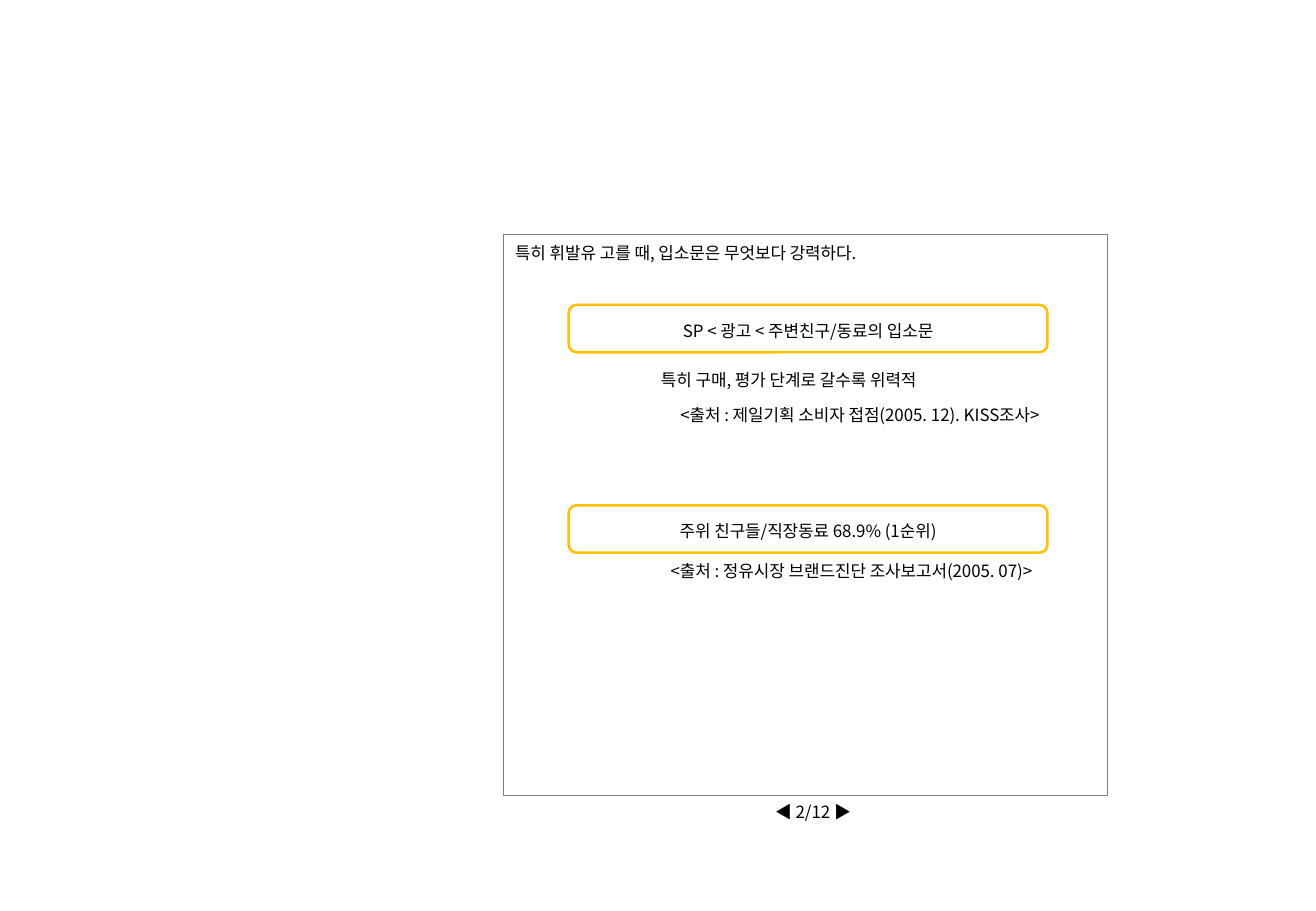
from pptx import Presentation
from pptx.dml.color import RGBColor
from pptx.enum.shapes import MSO_SHAPE
from pptx.enum.text import MSO_ANCHOR, MSO_AUTO_SIZE, PP_ALIGN
from pptx.oxml.ns import qn
from pptx.util import Inches, Pt
from lxml import etree

FONT = "Noto Sans CJK KR"


def color(value):
    return RGBColor.from_string(value)


def write(frame, text, align=PP_ALIGN.LEFT, wrap=False, line_spacing=None):
    frame.word_wrap = wrap
    para = frame.paragraphs[0]
    para.alignment = align
    if line_spacing:
        para.line_spacing = line_spacing
    span = para.add_run()
    span.text = text
    span.font.size = Pt(10)
    span.font.name = FONT
    span.font.color.rgb = color("000000")
    # Hangul takes the East Asian typeface
    etree.SubElement(span.font._element, qn("a:ea"), typeface=FONT)


def add_label(page, left, top, width, text, **text_format):
    box = page.shapes.add_textbox(
        Inches(left), Inches(top), Inches(width), Inches(0.27))
    write(box.text_frame, text, **text_format)
    box.text_frame.auto_size = MSO_AUTO_SIZE.SHAPE_TO_FIT_TEXT


def add_outline(page, kind, left, top, width, height, line_color, line_width):
    shape = page.shapes.add_shape(
        kind, Inches(left), Inches(top), Inches(width), Inches(height))
    shape.shadow.inherit = False
    shape.fill.background()
    shape.line.color.rgb = color(line_color)
    shape.line.width = Pt(line_width)
    return shape


def add_finding(page, top, text):
    shape = add_outline(page, MSO_SHAPE.ROUNDED_RECTANGLE,
                        4.68, top, 3.94, 0.39, "FFC000", 1.5)
    shape.text_frame.vertical_anchor = MSO_ANCHOR.MIDDLE
    write(shape.text_frame, text, align=PP_ALIGN.CENTER, line_spacing=1.2)


def main():
    deck = Presentation()
    deck.slide_width, deck.slide_height = Inches(10.83), Inches(7.5)
    page = deck.slides.add_slide(deck.slide_layouts[6])

    # Page counter and headline
    add_label(page, 6.15, 6.55, 1.08, "◀ 2/12 ▶",
              align=PP_ALIGN.CENTER, wrap=True)
    add_label(page, 4.14, 1.95, 5, "특히 휘발유 고를 때, 입소문은 무엇보다 강력하다.",
              wrap=True)

    # Word of mouth compared with advertising
    add_finding(page, 2.51, "SP < 광고 < 주변친구/동료의 입소문")
    add_label(page, 5.34, 2.99, 2.59, "특히 구매, 평가 단계로 갈수록 위력적")
    add_label(page, 5.5, 3.28, 3.55,
              "<출처 : 제일기획 소비자 접점(2005. 12). KISS조사>")

    # Share of friends and colleagues
    add_finding(page, 4.16, "주위 친구들/직장동료 68.9% (1순위)")
    add_label(page, 5.42, 4.57, 3.56,
              "<출처 : 정유시장 브랜드진단 조사보고서(2005. 07)>")

    # Content frame
    add_outline(page, MSO_SHAPE.RECTANGLE, 4.14, 1.93, 4.97, 4.62,
                "808080", 0.25)

    deck.save("out.pptx")


if __name__ == "__main__":
    main()
